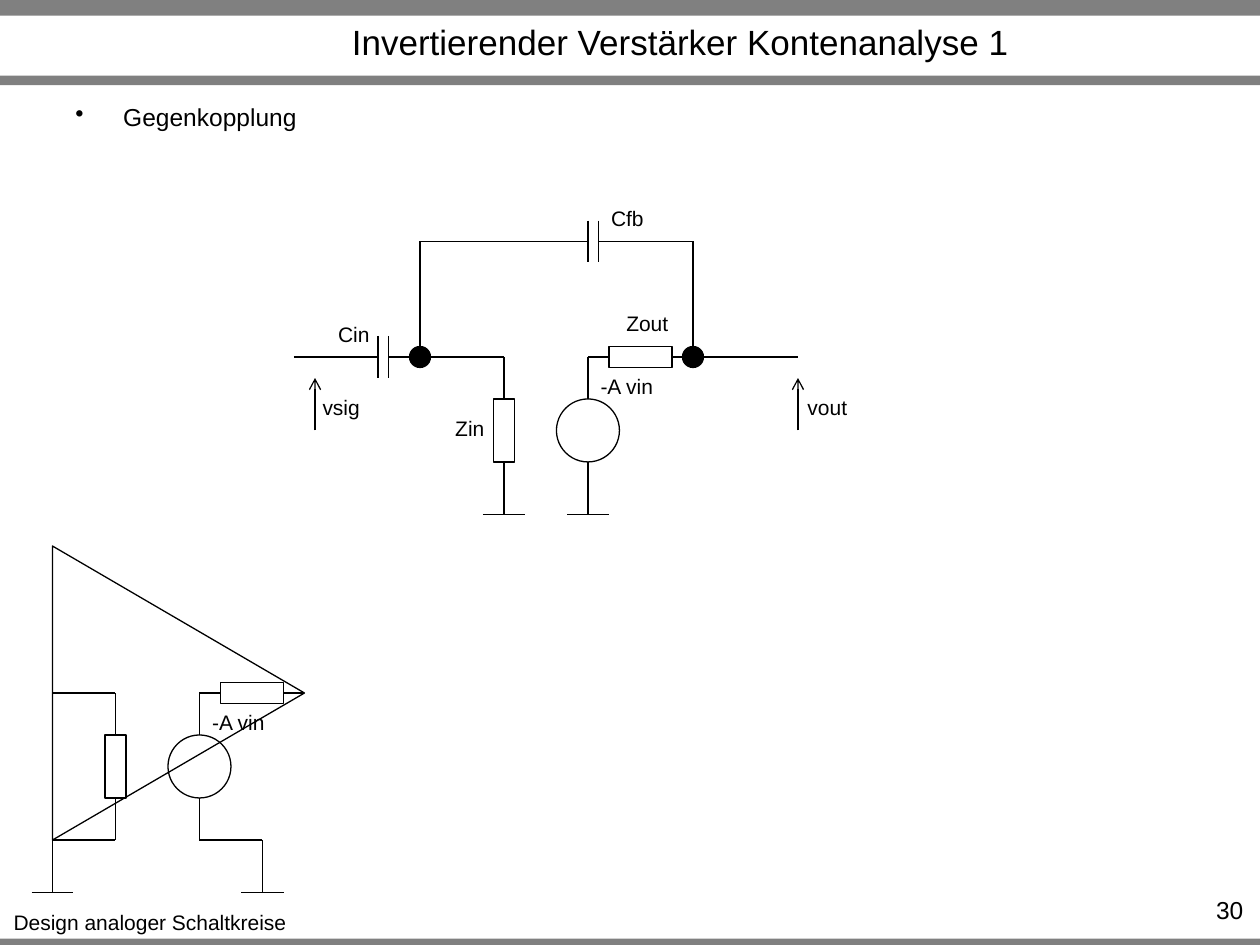
from lxml.etree import SubElement
from pptx import Presentation
from pptx.dml.color import RGBColor
from pptx.enum.shapes import MSO_CONNECTOR, MSO_SHAPE
from pptx.enum.text import MSO_ANCHOR, PP_ALIGN
from pptx.oxml.ns import qn
from pptx.util import Inches, Pt

THEME = {
    "ink": RGBColor(0, 0, 0), "paper": RGBColor(255, 255, 255), "bar": RGBColor(128, 128, 128),
    "font": "Arial", "title": Pt(20), "body": Pt(14), "label": Pt(12), "stroke": Pt(0.75),
}
COLUMNS, ROWS = 120, 90
deck = Presentation()
deck.slide_width, deck.slide_height = Inches(10), Inches(7.5)
cell = deck.slide_width / COLUMNS
slide = deck.slides.add_slide(deck.slide_layouts[6])
terminals = {}


def part(kind, left, top, width, height, fill=None, outline=True):
    symbol = slide.shapes.add_shape(kind, *(round(n * cell) for n in (left, top, width, height)))
    symbol.shadow.inherit = False
    if fill is None:
        symbol.fill.background()
    else:
        symbol.fill.solid()
        symbol.fill.fore_color.rgb = fill
    if outline:
        symbol.line.color.rgb = THEME["ink"]
        symbol.line.width = THEME["stroke"]
    else:
        symbol.line.fill.background()
    return symbol


def write(text, left, top, width, height, size="label", align=PP_ALIGN.CENTER, **frame_format):
    frame = slide.shapes.add_textbox(*(round(n * cell) for n in (left, top, width, height))).text_frame
    for name, value in {"word_wrap": False, **frame_format}.items():
        setattr(frame, name, value)
    line = frame.paragraphs[0]
    line.text = text
    line.alignment = align
    font = line.runs[0].font
    for name, value in {"name": THEME["font"], "size": THEME[size]}.items():
        setattr(font, name, value)
    font.color.rgb = THEME["ink"]
    return line


for top, height in ((89.4, 0.9), (0, 1.5), (7.2, 0.9)):
    part(MSO_SHAPE.RECTANGLE, 0, top, COLUMNS, height, THEME["bar"], outline=False)

write("Design analoger Schaltkreise", 0, 86, 28.6, 3.6)
write("Invertierender Verstärker Kontenanalyse 1", 15.6, 1.7, 98.4, 4.5, "title",
      word_wrap=True, vertical_anchor=MSO_ANCHOR.MIDDLE)
write("30", 109.2, 84.7, 10.4, 2.9, "body", PP_ALIGN.RIGHT, word_wrap=True)
topic = write("Gegenkopplung", 6, 9.1, 108, 5.9, "body", PP_ALIGN.LEFT, word_wrap=True)
topic_format = topic._p.get_or_add_pPr()
for name, value in {"marL": Inches(0.38), "indent": -Inches(0.38)}.items():
    topic_format.set(name, str(value))
SubElement(topic_format, qn("a:buChar")).set("char", "•")

wires = [
    (28, 34, 36, 34), (66, 34, 76, 34),
    (40, 34, 40, 23), (40, 23, 56, 23), (57, 23, 66, 23), (66, 23, 66, 34),
    (5, 80, 11, 80), (5, 80, 5, 85), (19, 80, 25, 80), (25, 80, 25, 85),
]
for plate, middle in ((36, 34), (56, 23)):
    wires += [(x, middle - 2, x, middle + 2) for x in (plate, plate + 1)]
for x, y in ((48, 49), (56, 49), (5, 85), (25, 85)):
    wires.append((x - 2, y, x + 2, y))

for x, y, lead, leg in ((11, 66, 6, 14), (48, 34, 11, 15)):
    source = part(MSO_SHAPE.OVAL, x + 5, y + 4, 6, 6)
    zin = part(MSO_SHAPE.RECTANGLE, x - 1, y + 4, 2, 6)
    zout = part(MSO_SHAPE.RECTANGLE, x + 10, y - 1, 6, 2, THEME["paper"])
    terminals.update({
        (x, y + 4): (zin, 0), (x, y + 10): (zin, 2),
        (x + 10, y): (zout, 1), (x + 16, y): (zout, 3),
        (x + 8, y + 4): (source, 0), (x + 8, y + 10): (source, 4),
    })
    wires += [(x - lead, y, x, y), (x + 8, y, x + 10, y), (x + 16, y, x + 18, y)]
    for branch in (x, x + 8):
        wires += [(branch, y, branch, y + 4), (branch, y + 10, branch, y + leg)]
    write("-A vin", x + 8, y + 1, 7.4, 3.6)

amplifier = part(MSO_SHAPE.ISOSCELES_TRIANGLE, 3, 54, 28, 24)
amplifier.rotation = 90

arrows = [(30, 41, 30, 36), (76, 41, 76, 36)]
for ends in wires + arrows:
    wire = slide.shapes.add_connector(MSO_CONNECTOR.STRAIGHT, *(round(n * cell) for n in ends))
    wire.line.color.rgb = THEME["ink"]
    wire.line.width = THEME["stroke"]
    if ends in arrows:
        SubElement(wire.line._get_or_add_ln(), qn("a:tailEnd")).set("type", "arrow")
    SubElement(wire._element.spPr, qn("a:effectLst"))
    for point, join in ((ends[:2], wire.begin_connect), (ends[2:], wire.end_connect)):
        if point in terminals:
            symbol, site = terminals[point]
            if site < 4:
                join(symbol, site)

for x in (40, 66):
    part(MSO_SHAPE.OVAL, x - 1, 33, 2, 2, THEME["ink"])

for text, left, top, width in (
    ("Cfb", 57, 19, 5.5), ("Cin", 31, 30, 5.4), ("vout", 75.7, 37, 6.2),
    ("vsig", 29.5, 37, 6), ("Zin", 42.1, 39, 5.3), ("Zout", 58.3, 29, 6.7),
):
    write(text, left, top, width, 3.6)

deck.save("out.pptx")
